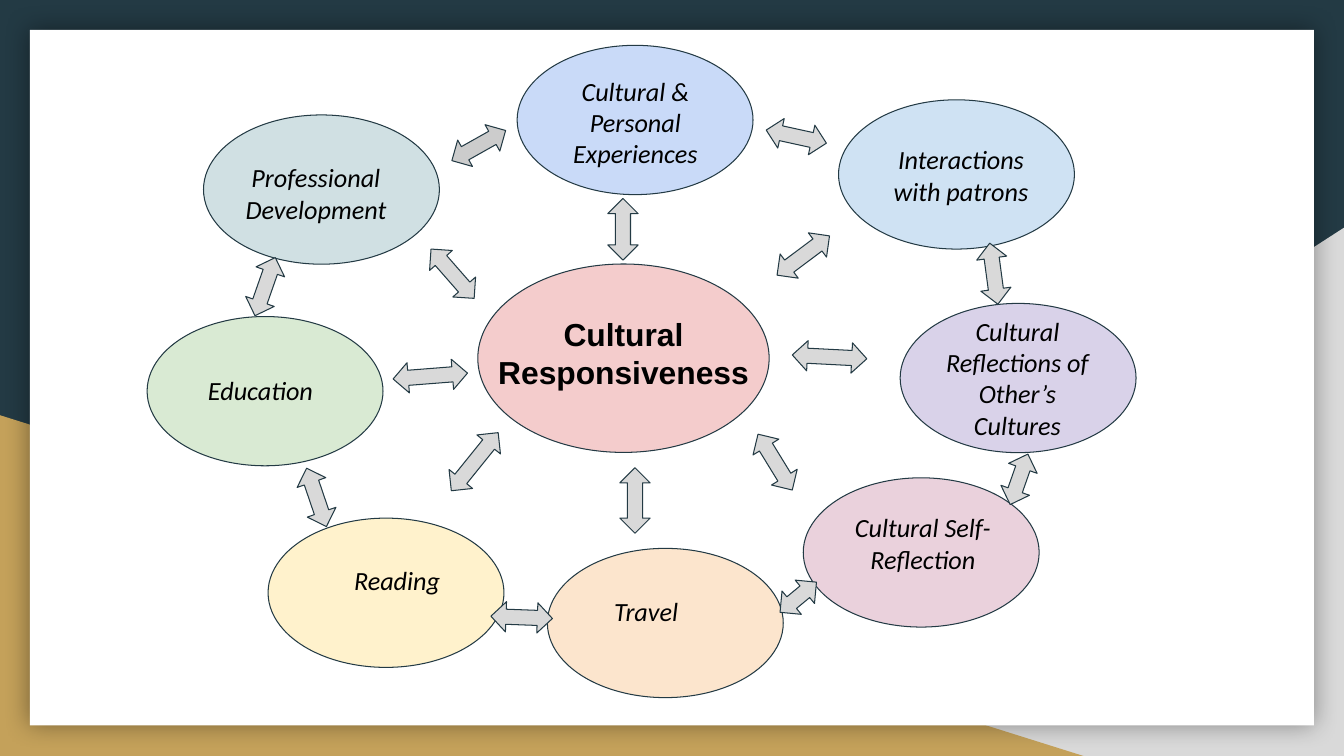
from lxml.etree import SubElement
from pptx import Presentation
from pptx.dml.color import RGBColor
from pptx.enum.shapes import MSO_SHAPE as SHAPE
from pptx.enum.text import MSO_ANCHOR, PP_ALIGN
from pptx.oxml.ns import qn
from pptx.util import Pt

WIDTH, HEIGHT = 960, 540
NAVY, GRAY, GOLD, WHITE, BLACK = "233A44", "D9D9D9", "C4A15A", "FFFFFF", "000000"
TOPIC_W, TOPIC_H = 168.5, 106.6
ARROW_W = 21.6

# label, fill, topic left and top, label offset right and down, label width
TOPICS = [
    ("Cultural & Personal Experiences", "C9DAF8", 369.4, 32.4, 15, 11.5, 139),
    ("Interactions with patrons", "CFE2F3", 599, 71.3, 20.2, 21.6, 134.6),
    ("Cultural Reflections of Other’s Cultures", "D9D2E9", 643, 216.7, 16.5, -1.4, 134.6),
    ("Cultural Self-Reflection", "EAD1DC", 573.8, 341.3, 15.9, 14.4, 139),
    ("Travel", "FCE5CD", 391, 391.7, 12.9, 23.7, 115.2),
    ("Reading", "FFF2CC", 191.5, 370.1, 34.6, 23.7, 115.2),
    ("Education", "D9EAD3", 105.1, 226.1, 18.7, 31.7, 124.6),
    ("Professional Development", "D0E0E3", 145.4, 82.1, 18, 23.7, 124.6),
]

# centre x, centre y, length, rotation
SPOKES = [
    (445, 163.8, 44, 0),
    (573.8, 182.5, 46.8, 233.2),
    (592.6, 254.9, 53.3, 272.9),
    (553.7, 330.1, 46.8, 328.5),
    (453.6, 357.5, 46.8, 0),
    (339.1, 329.8, 53.3, 38.9),
    (307.4, 268.6, 53.3, 265.5),
    (323.3, 195.5, 46.8, 318.8),
]
RING = [
    (568.8, 97.6, 44, 102.3),
    (709.9, 195.5, 44, 352.4),
    (727.9, 342.4, 38.2, 19.3),
    (570.2, 426.6, 33.8, 50.4),
    (372.6, 441, 44, 92.1),
    (226.1, 355.3, 44, 341.2),
    (189.4, 204.8, 44, 19.3),
]
RING_DARK = (342, 104, 44, 60.7)


def rgb(color):
    """Turn a hex string into a colour."""
    return RGBColor.from_string(color)


def add_shape(slide, kind, x, y, w, h, fill, line=None):
    """Add a flat filled shape, outlined if a line colour is given."""
    sp = slide.shapes.add_shape(kind, Pt(x), Pt(y), Pt(w), Pt(h))
    sp.shadow.inherit = False
    sp.fill.solid()
    sp.fill.fore_color.rgb = rgb(fill)
    if line:
        sp.line.color.rgb = rgb(line)
        sp.line.width = Pt(0.75)
    else:
        sp.line.fill.background()
    return sp


def add_label(slide, text, x, y, w, h, size, font, bold=False, italic=False):
    """Add centred, wrapped text at the top of a box."""
    tf = slide.shapes.add_textbox(Pt(x), Pt(y), Pt(w), Pt(h)).text_frame
    tf.word_wrap = True
    tf.vertical_anchor = MSO_ANCHOR.TOP
    tf.margin_left = tf.margin_right = tf.margin_top = tf.margin_bottom = Pt(9.6)
    p = tf.paragraphs[0]
    p.text = text
    p.alignment = PP_ALIGN.CENTER
    f = p.runs[0].font
    f.size, f.name, f.bold, f.italic = Pt(size), font, bold, italic
    f.color.rgb = rgb(BLACK)


def add_backdrop(slide, w, h):
    """Fill the slide with navy, two corner triangles and a shadowed card."""
    slide.background.fill.solid()
    slide.background.fill.fore_color.rgb = rgb(NAVY)
    corner = add_shape(slide, SHAPE.RIGHT_TRIANGLE, w - 584, h - 377.3, 584, 377.3, GRAY)
    corner.element.spPr.find(qn("a:xfrm")).set("flipH", "1")
    add_shape(slide, SHAPE.RIGHT_TRIANGLE, 0, h - 243.4, 774, 243.4, GOLD)
    card = add_shape(slide, SHAPE.RECTANGLE, 21.4, 21.4, w - 42.8, h - 43.2, WHITE)
    effects = card.element.spPr.find(qn("a:effectLst"))
    shadow = SubElement(effects, qn("a:outerShdw"), blurRad=str(Pt(18)), dist="0",
                        algn="ctr", rotWithShape="0")
    color = SubElement(shadow, qn("a:srgbClr"), val=BLACK)
    SubElement(color, qn("a:alpha"), val="40000")


def add_hub(slide, x, y, w, h):
    """Add the central idea."""
    add_shape(slide, SHAPE.OVAL, x, y, w, h, "F4CCCC", NAVY)
    add_label(slide, "Cultural Responsiveness", x, y + 26.6, w, h - 11.5, 22.7, "Arial", bold=True)


def add_topic(slide, text, fill, x, y, dx, dy, label_w):
    """Add one topic ellipse with its label."""
    add_shape(slide, SHAPE.OVAL, x, y, TOPIC_W, TOPIC_H, fill, NAVY)
    add_label(slide, text, x + dx, y + dy, label_w, 59, 18.7, "Calibri", italic=True)


def add_arrow(slide, cx, cy, length, angle, fill=GRAY):
    """Add a double arrow turned about its centre."""
    sp = add_shape(slide, SHAPE.UP_DOWN_ARROW, cx - ARROW_W / 2, cy - length / 2,
                   ARROW_W, length, fill, NAVY)
    sp.rotation = angle


def main():
    """Build and save the slide."""
    prs = Presentation()
    prs.slide_width, prs.slide_height = Pt(WIDTH), Pt(HEIGHT)
    slide = prs.slides.add_slide(prs.slide_layouts[6])
    add_backdrop(slide, WIDTH, HEIGHT)
    add_hub(slide, 341.3, 188.6, 208.1, 134.6)
    for topic in TOPICS:
        add_topic(slide, *topic)
    for arrow in SPOKES + RING:
        add_arrow(slide, *arrow)
    add_arrow(slide, *RING_DARK, fill="CCCCCC")
    prs.save("out.pptx")


if __name__ == "__main__":
    main()
